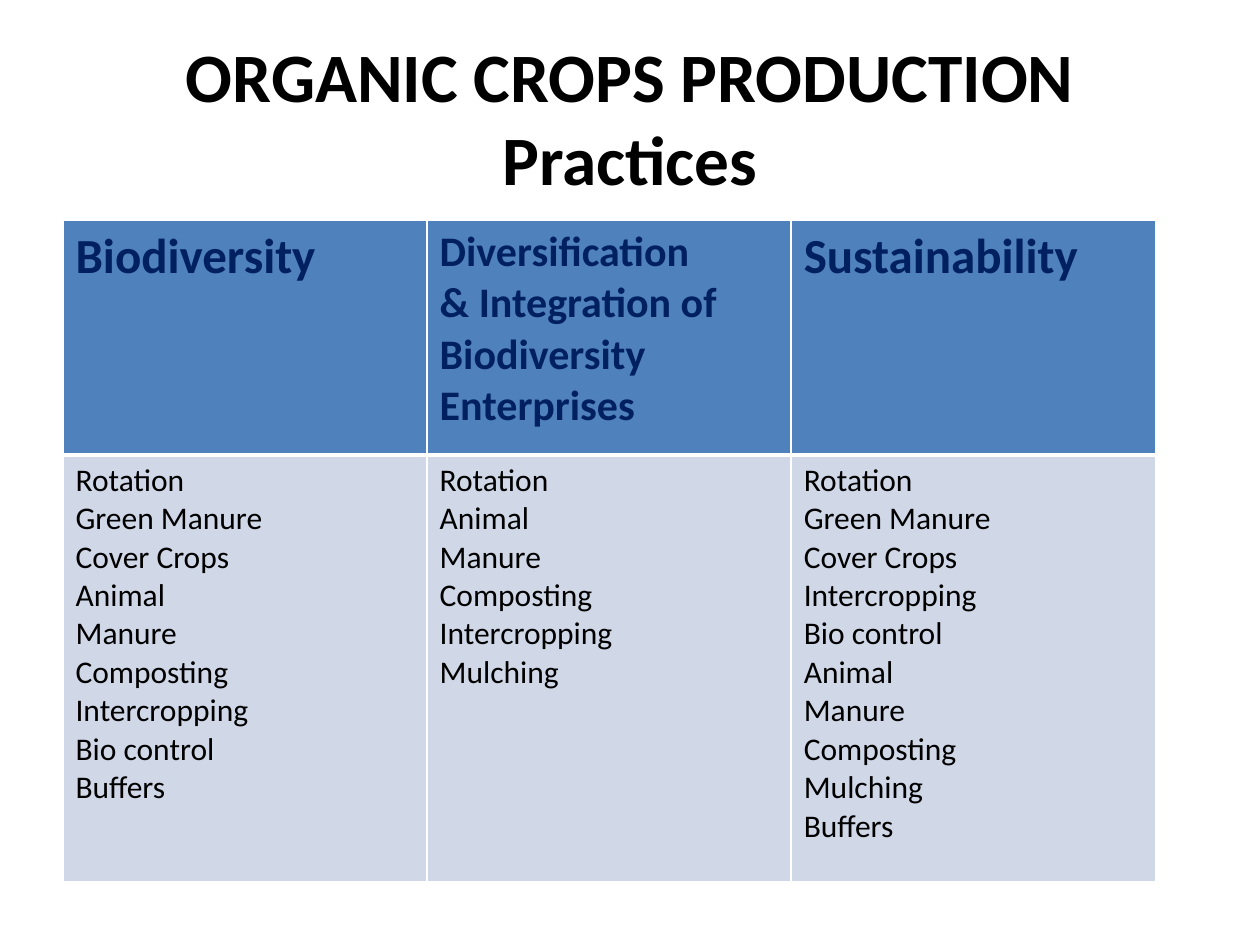
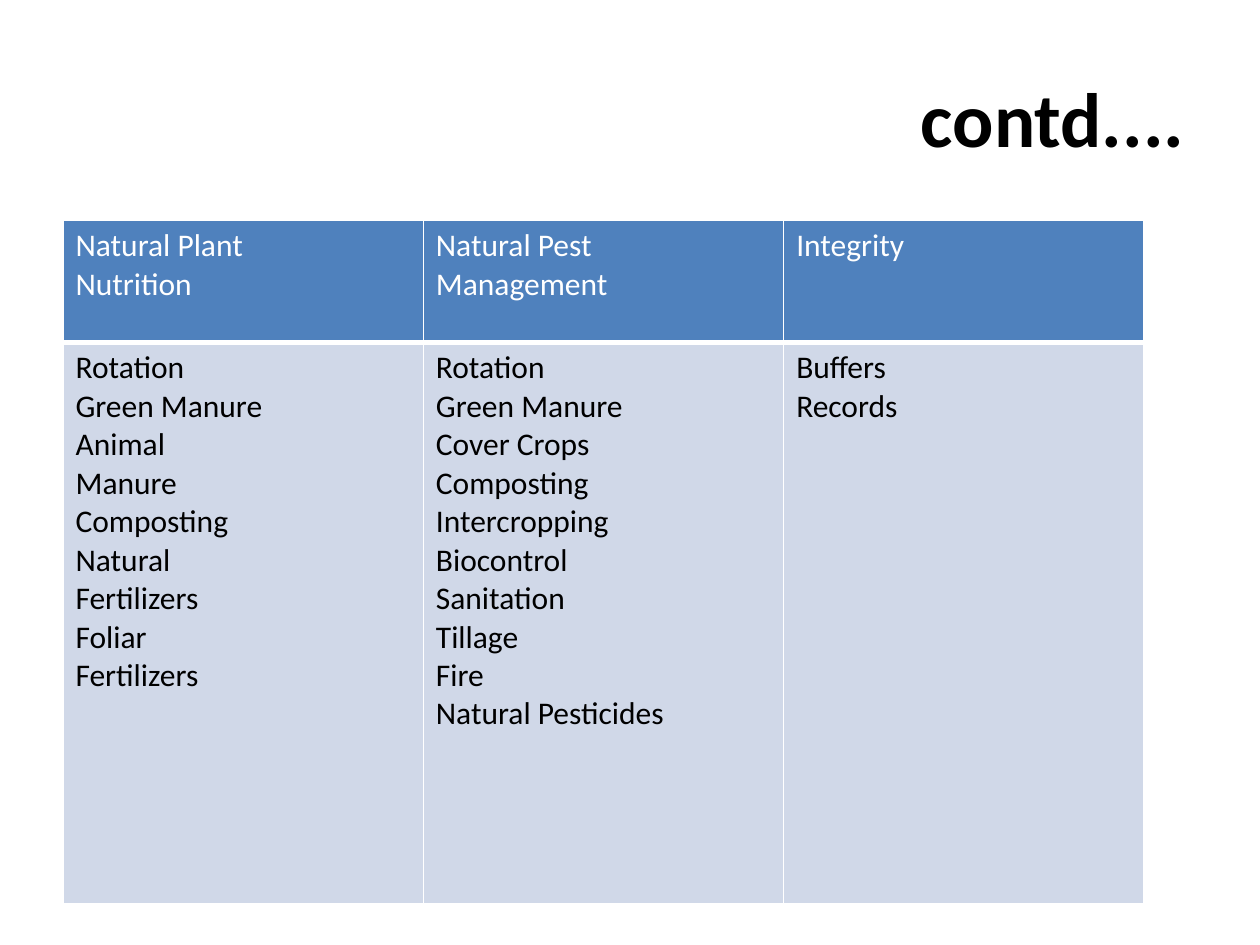
from dataclasses import dataclass

from lxml.etree import SubElement
from pptx import Presentation
from pptx.dml.color import RGBColor
from pptx.enum.text import MSO_ANCHOR, MSO_AUTO_SIZE, PP_ALIGN
from pptx.oxml.ns import qn
from pptx.util import Inches, Pt

FONT = "Calibri"
BLACK, WHITE, NAVY = "000000", "FFFFFF", "002060"
HEAD_FILL, BODY_FILL = "4F81BD", "D0D8E8"
BODY_SIZE = 18
THIN, THICK = 1, 3


@dataclass(frozen=True)
class Column:
    heading: str
    practices: str
    heading_size: float = BODY_SIZE


@dataclass(frozen=True)
class PracticeSlide:
    title: str
    title_size: float
    title_align: PP_ALIGN
    heading_color: str
    heading_bold: bool
    column_width: float
    row_heights: tuple[float, float]
    columns: tuple[Column, ...]


SLIDES = (
    PracticeSlide(
        "ORGANIC CROPS PRODUCTION\nPractices", 39.6, PP_ALIGN.CENTER,
        NAVY, True, 2.89, (1.86, 3.39),
        (
            Column("Biodiversity",
                   "Rotation\nGreen Manure\nCover Crops\nAnimal\nManure\n"
                   "Composting\nIntercropping\nBio control\nBuffers", 28),
            Column("Diversification\n& Integration of\nBiodiversity Enterprises",
                   "Rotation\nAnimal\nManure\nComposting\nIntercropping\nMulching", 24),
            Column("Sustainability",
                   "Rotation\nGreen Manure\nCover Crops\nIntercropping\nBio control\n"
                   "Animal\nManure\nComposting\nMulching\nBuffers", 28),
        ),
    ),
    PracticeSlide(
        "contd....", 44, PP_ALIGN.RIGHT,
        WHITE, False, 2.86, (0.97, 4.45),
        (
            Column("Natural Plant\nNutrition",
                   "Rotation\nGreen Manure\nAnimal\nManure\nComposting\n"
                   "Natural\nFertilizers\nFoliar\nFertilizers"),
            Column("Natural Pest\nManagement",
                   "Rotation\nGreen Manure\nCover Crops\nComposting\nIntercropping\n"
                   "Biocontrol\nSanitation\nTillage\nFire\nNatural Pesticides"),
            Column("Integrity", "Buffers\nRecords"),
        ),
    ),
)


def rgb(color: str) -> RGBColor:
    """Turn a hex string into a colour."""
    return RGBColor.from_string(color)


def format_runs(tf, size: float, color: str, bold: bool) -> None:
    """Give every run of a text frame one font."""
    for p in tf.paragraphs:
        for r in p.runs:
            r.font.name = FONT
            r.font.size = Pt(size)
            r.font.bold = bold
            r.font.color.rgb = rgb(color)


def set_borders(cell, top: float, bottom: float) -> None:
    """Draw white borders around a cell."""
    tc_pr = cell._tc.get_or_add_tcPr()
    for side, width in (("L", THIN), ("R", THIN), ("T", top), ("B", bottom)):
        ln = SubElement(tc_pr, qn(f"a:ln{side}"), w=str(Pt(width)))
        fill = SubElement(ln, qn("a:solidFill"))
        SubElement(fill, qn("a:srgbClr"), val=WHITE)


def fill_cell(cell, text: str, fill: str, size: float, color: str, bold: bool) -> None:
    """Write and colour one table cell."""
    cell.text_frame.text = text
    format_runs(cell.text_frame, size, color, bold)
    cell.fill.solid()
    cell.fill.fore_color.rgb = rgb(fill)


def add_title(s, data: PracticeSlide) -> None:
    """Fill and place the title placeholder."""
    sp = s.shapes.title
    sp.left, sp.top = Inches(0.5), Inches(0.3)
    sp.width, sp.height = Inches(9), Inches(1.25)
    tf = sp.text_frame
    tf.auto_size = MSO_AUTO_SIZE.NONE
    tf.vertical_anchor = MSO_ANCHOR.MIDDLE
    p = tf.paragraphs[0]
    p.text = data.title
    p.alignment = data.title_align
    format_runs(tf, data.title_size, BLACK, True)


def add_practice_table(s, data: PracticeSlide) -> None:
    """Add the table with one heading and one practice list per column."""
    count = len(data.columns)
    table = s.shapes.add_table(
        2, count, Inches(0.5), Inches(1.75),
        Inches(data.column_width * count), Inches(sum(data.row_heights))).table
    for row, height in zip(table.rows, data.row_heights):
        row.height = Inches(height)
    for i, column in enumerate(data.columns):
        table.columns[i].width = Inches(data.column_width)
        head, body = table.cell(0, i), table.cell(1, i)
        set_borders(head, THIN, THICK)
        set_borders(body, THICK, THIN)
        fill_cell(head, column.heading, HEAD_FILL, column.heading_size,
                  data.heading_color, data.heading_bold)
        fill_cell(body, column.practices, BODY_FILL, BODY_SIZE, BLACK, False)


def main() -> None:
    """Build the presentation."""
    prs = Presentation()
    prs.slide_width, prs.slide_height = Inches(10), Inches(7.5)
    title_only = prs.slide_layouts.get_by_name("Title Only")
    for data in SLIDES:
        s = prs.slides.add_slide(title_only)
        add_title(s, data)
        add_practice_table(s, data)
    prs.save("out.pptx")


if __name__ == "__main__":
    main()
